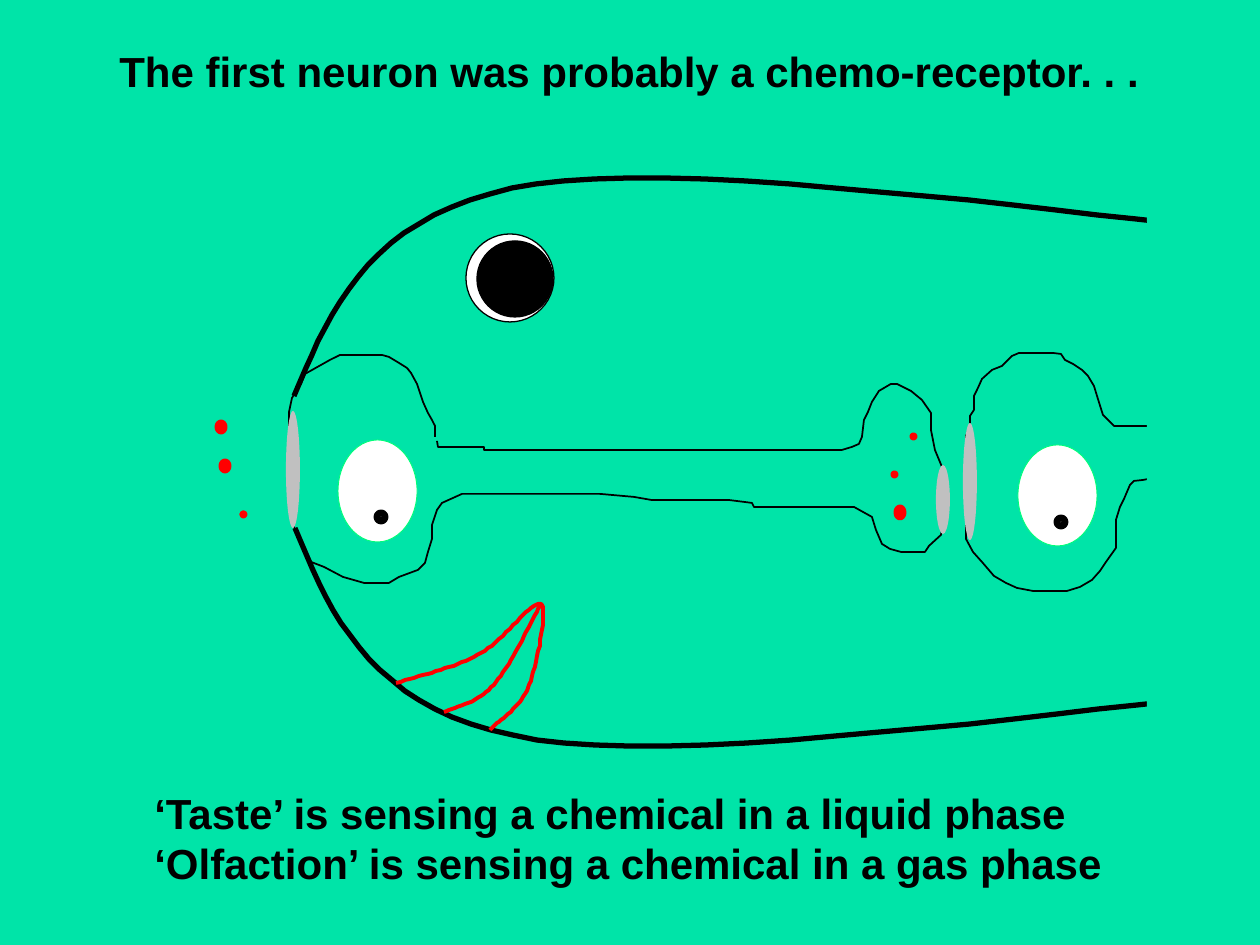
from pptx import Presentation
from pptx.dml.color import RGBColor
from pptx.enum.shapes import MSO_SHAPE
from pptx.enum.text import MSO_AUTO_SIZE
from pptx.util import Emu, Pt

OVAL, RECT = MSO_SHAPE.OVAL, MSO_SHAPE.RECTANGLE
GROW = MSO_AUTO_SIZE.SHAPE_TO_FIT_TEXT
PX = 914400 // 126
COLORS = {"sea": "00E4A8", "black": "000000", "white": "FFFFFF", "red": "FF0000",
          "yellow": "FFFF00", "gray": "C0C0C0", "lime": "00FF78"}

# Text: box, paragraphs
TITLE = ((107, 39, 1047, 63), ["The first neuron was probably a chemo-receptor. . ."])
NOTES = ((142, 781, 974, 113), ["‘Taste’ is sensing a chemical in a liquid phase",
                                "‘Olfaction’ is sensing a chemical in a gas phase"])

# Cell outlines
RECEPTOR_CELL = [
    # cell body
    (435, 437), (435, 426), (432, 420), (428, 413), (423, 402), (417, 384), (411, 373),
    (407, 368), (399, 363), (389, 357), (382, 355), (340, 355), (330, 360), (305, 374),
    (301, 384), (292, 398), (289, 412), (289, 507), (291, 520), (299, 539), (305, 552),
    (311, 562), (324, 567), (343, 577), (364, 583), (389, 583), (399, 577), (418, 570),
    (425, 563), (428, 552), (432, 539), (432, 525), (437, 510), (442, 503), (462, 494),
    # axon, lower side
    (600, 494), (634, 497), (651, 500), (728, 500), (752, 503), (754, 507), (854, 507),
    # terminal
    (872, 517), (876, 530), (882, 544), (890, 549), (901, 552), (925, 552), (929, 546),
    (941, 535), (942, 530), (942, 467), (935, 450), (931, 430), (931, 413), (922, 400),
    (911, 391), (897, 384), (891, 384), (879, 391), (872, 402), (868, 412), (864, 420),
    (862, 437), (859, 444), (852, 447),
    # axon, upper side
    (842, 450), (484, 450), (484, 447), (438, 447), (437, 441)]
NEXT_CELL = [
    (1149, 426), (1114, 426), (1103, 415), (1098, 399), (1094, 386), (1088, 376),
    (1082, 370), (1073, 364), (1065, 360), (1061, 354), (1053, 353), (1019, 353),
    (1012, 356), (1008, 360), (1002, 366), (992, 370), (982, 379), (978, 388), (974, 396),
    (974, 410), (970, 416), (970, 426), (966, 436), (966, 539), (973, 552), (982, 562),
    (988, 569), (994, 576), (1006, 583), (1017, 588), (1033, 591), (1067, 591),
    (1080, 587), (1092, 580), (1100, 571), (1106, 562), (1116, 548), (1116, 520),
    (1120, 507), (1124, 499), (1130, 485), (1134, 481), (1143, 480), (1148, 479)]

# Ovals: box, fill, line, line width in points
CELL_PARTS = [
    ((338, 440, 79, 102), "white", "lime", 0.5), ((377, 513, 8, 8), None, "black", 4),
    ((1018, 445, 79, 101), "white", "lime", 0.5), ((1057, 518, 8, 8), None, "black", 4),
    ((963, 423, 14, 117), "gray", None, 0), ((286, 411, 14, 117), "gray", None, 0),
    ((936, 465, 14, 69), "gray", None, 0)]
ODOUR_DOTS = [(222, 462, 6, 8), (218, 423, 6, 8), (243, 514, 1, 1)]
TRANSMITTER_DOTS = [(897, 508, 6, 9), (913, 436, 1, 1), (894, 474, 1, 1)]
EYE = [((466, 234, 88, 88), "white", "black", 0.75),
       ((477, 241, 76, 76), "black", "black", 0.75)]
CURVE_END_COVER = (1147, 149, 113, 614)

# Bezier chains: a start, then two control points and an end for each piece
HEAD = [
    [(294, 396), (333, 304), (372, 210), (536, 184), (701, 157), (1158, 226), (1281, 234)],
    [(295, 528), (334, 621), (372, 713), (537, 740), (702, 767), (1159, 698), (1283, 690)]]
MOUTH = [
    [(396, 683), (426, 674), (457, 667), (481, 653), (505, 640), (532, 599), (541, 604),
     (548, 610), (537, 667), (528, 688), (520, 708), (496, 723), (490, 730)],
    [(444, 712), (462, 706), (480, 701), (496, 682), (512, 664), (533, 617), (541, 604)]]
STEPS = 20


def rgb(name):
    return RGBColor.from_string(COLORS[name])


def style(sp, fill, line, width):
    sp.shadow.inherit = False
    if fill:
        sp.fill.solid()
        sp.fill.fore_color.rgb = rgb(fill)
    else:
        sp.fill.background()
    if line:
        sp.line.color.rgb = rgb(line)
        sp.line.width = Pt(width)
    else:
        sp.line.fill.background()


def add_preset(shapes, kind, box, fill, line=None, width=0):
    sp = shapes.add_shape(kind, *(Emu(v * PX) for v in box))
    style(sp, fill, line, width)


def add_outline(shapes, points, color, width):
    builder = shapes.build_freeform(*points[0], scale=PX)
    builder.add_line_segments(points[1:], close=False)
    style(builder.convert_to_shape(), None, color, width)


def bezier_points(chain):
    points = [chain[0]]
    for i in range(0, len(chain) - 1, 3):
        a, b, c, d = chain[i:i + 4]
        for n in range(1, STEPS + 1):
            t = n / STEPS
            u = 1 - t
            points.append(tuple(
                u**3 * a[k] + 3 * u * u * t * b[k] + 3 * u * t * t * c[k] + t**3 * d[k]
                for k in (0, 1)))
    return points


def add_text(shapes, box, lines):
    tf = shapes.add_textbox(*(Emu(v * PX) for v in box)).text_frame
    tf.word_wrap = False
    tf.auto_size = GROW
    for i, line in enumerate(lines):
        p = tf.add_paragraph() if i else tf.paragraphs[0]
        r = p.add_run()
        r.text = line
        r.font.name, r.font.size, r.font.bold = "Arial", Pt(24), True
        r.font.color.rgb = rgb("black")


prs = Presentation()
prs.slide_width, prs.slide_height = Emu(1260 * PX), Emu(945 * PX)
s = prs.slides.add_slide(prs.slide_layouts[6])
s.background.fill.solid()
s.background.fill.fore_color.rgb = rgb("sea")
shapes = s.shapes

# Neurons with nuclei and membranes
for cell in (RECEPTOR_CELL, NEXT_CELL):
    add_outline(shapes, cell, "black", 1)
for part in CELL_PARTS:
    add_preset(shapes, OVAL, *part)

# Molecules outside the head and in the terminal
odours = shapes.add_group_shape().shapes
for target, dots in ((odours, ODOUR_DOTS), (shapes, TRANSMITTER_DOTS)):
    for dot in dots:
        add_preset(target, OVAL, dot, "yellow", "red", 4)

# Title and notes
for block in (TITLE, NOTES):
    add_text(shapes, *block)

# Head, eye and mouth
for chain in HEAD:
    add_outline(shapes, bezier_points(chain), "black", 3)
for part in EYE:
    add_preset(shapes, OVAL, *part)
add_preset(shapes, RECT, CURVE_END_COVER, "sea")
for chain in MOUTH:
    add_outline(shapes, bezier_points(chain), "red", 2.25)

prs.save("out.pptx")
